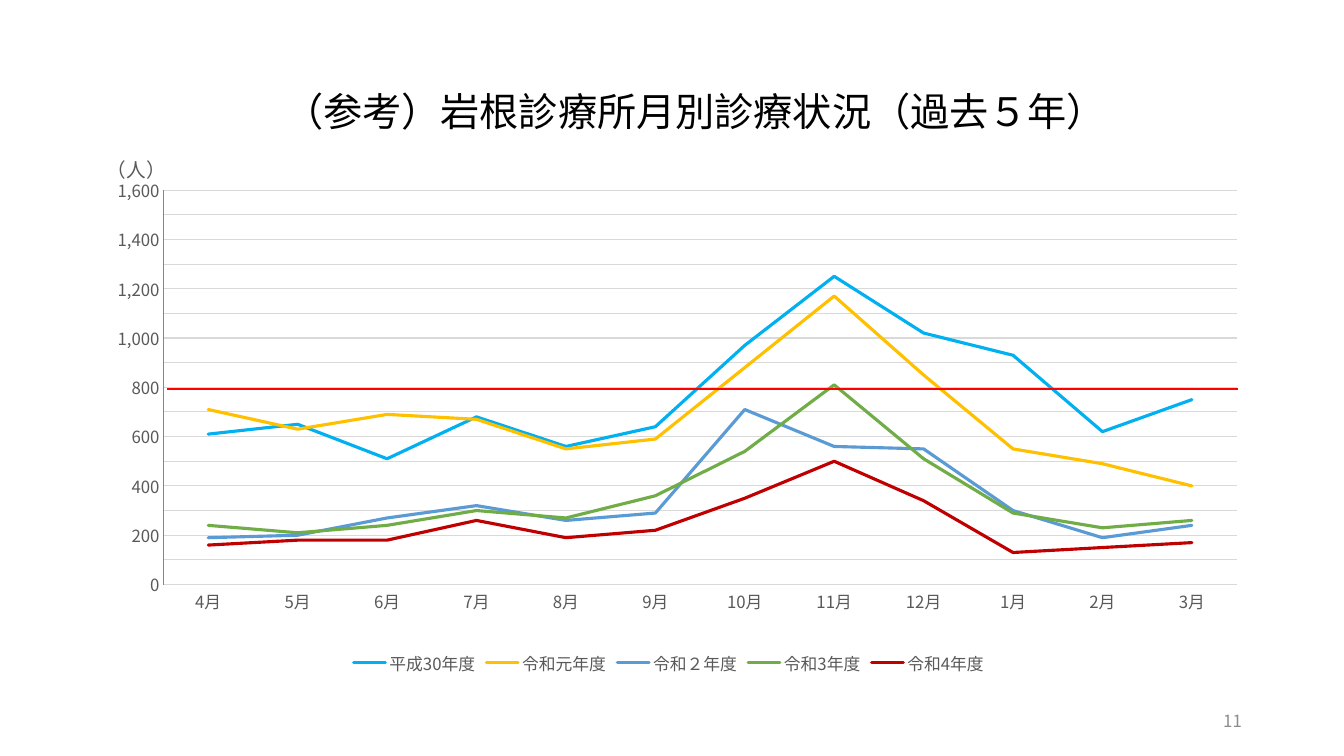
from dataclasses import dataclass

from lxml.etree import SubElement
from pptx import Presentation
from pptx.chart.axis import CategoryAxis, ValueAxis
from pptx.chart.chart import Chart
from pptx.chart.data import CategoryChartData
from pptx.dml.color import RGBColor
from pptx.enum.chart import XL_CHART_TYPE, XL_LEGEND_POSITION, XL_TICK_MARK
from pptx.enum.shapes import MSO_CONNECTOR
from pptx.enum.text import MSO_ANCHOR, MSO_AUTO_SIZE, PP_ALIGN
from pptx.oxml import parse_xml
from pptx.oxml.ns import nsdecls, qn
from pptx.oxml.xmlchemy import BaseOxmlElement
from pptx.shapes.base import BaseShape
from pptx.slide import Slide
from pptx.text.text import Font
from pptx.util import Pt

FACE = "Noto Sans CJK JP"
BLACK = RGBColor(0x00, 0x00, 0x00)
TEXT = RGBColor(0x59, 0x59, 0x59)
PALE = RGBColor(0x8C, 0x8C, 0x8C)
AXIS = RGBColor(0x86, 0x86, 0x86)
GRID = RGBColor(0xD9, 0xD9, 0xD9)
RED = RGBColor(0xFF, 0x00, 0x00)
SKY = RGBColor(0x00, 0xB0, 0xF0)
GOLD = RGBColor(0xFF, 0xC0, 0x00)
BLUE = RGBColor(0x5B, 0x9B, 0xD5)
GREEN = RGBColor(0x70, 0xAD, 0x47)
WINE = RGBColor(0xC0, 0x00, 0x00)


@dataclass(frozen=True)
class Box:
    left: float
    top: float
    width: float
    height: float


@dataclass(frozen=True)
class Label:
    text: str
    box: Box
    size: float
    color: RGBColor
    align: PP_ALIGN
    space: float


@dataclass(frozen=True)
class Year:
    name: str
    color: RGBColor
    counts: tuple[int, ...]


MONTHS = [f"{(n + 3) % 12 + 1}月" for n in range(12)]
YEARS = (
    Year("平成30年度", SKY, (610, 650, 510, 680, 560, 640, 970, 1250, 1020, 930, 620, 750)),
    Year("令和元年度", GOLD, (710, 630, 690, 670, 550, 590, 880, 1170, 850, 550, 490, 400)),
    Year("令和２年度", BLUE, (190, 200, 270, 320, 260, 290, 710, 560, 550, 300, 190, 240)),
    Year("令和3年度", GREEN, (240, 210, 240, 300, 270, 360, 540, 810, 510, 290, 230, 260)),
    Year("令和4年度", WINE, (160, 180, 180, 260, 190, 220, 350, 500, 340, 130, 150, 170)),
)
TITLE = Label("（参考）岩根診療所月別診療状況（過去５年）",
              Box(164.2, 61.2, 664.6, 40.3), 28, BLACK, PP_ALIGN.CENTER, 0.9)
PAGE = Label("11", Box(678.2, 500.4, 216, 28.8), 12, PALE, PP_ALIGN.RIGHT, 1.0)
PLOT = Box(71.3, 100.8, 812.9, 384.5)


def style(font: Font, size: float, color: RGBColor) -> None:
    font.name = FACE
    font.size = Pt(size)
    font.bold = False
    font.color.rgb = color


def add_east(root: BaseOxmlElement) -> None:
    for latin in list(root.iter(qn("a:latin"))):
        latin.addnext(parse_xml(f'<a:ea {nsdecls("a")} typeface="{FACE}"/>'))


def fill_text(shape: BaseShape, label: Label) -> None:
    box = label.box
    shape.left, shape.top = Pt(box.left), Pt(box.top)
    shape.width, shape.height = Pt(box.width), Pt(box.height)
    frame = shape.text_frame
    frame.word_wrap = True
    frame.auto_size = MSO_AUTO_SIZE.NONE
    frame.vertical_anchor = MSO_ANCHOR.MIDDLE
    para = frame.paragraphs[0]
    para.alignment = label.align
    para.line_spacing = label.space
    run = para.add_run()
    run.text = label.text
    style(run.font, label.size, label.color)


def make_layout(places: dict[str, str | float]) -> BaseOxmlElement:
    items = "".join(f'<c:{key} val="{val}"/>' for key, val in places.items())
    return parse_xml(f'<c:layout {nsdecls("c")}><c:manualLayout>{items}'
                     '</c:manualLayout></c:layout>')


def style_axis(axis: CategoryAxis | ValueAxis, color: RGBColor) -> None:
    axis.major_tick_mark = axis.minor_tick_mark = XL_TICK_MARK.NONE
    style(axis.tick_labels.font, 12, TEXT)
    axis.format.line.color.rgb = color
    axis.format.line.width = Pt(0.75)


def add_unit(axis: CategoryAxis) -> None:
    title = axis.axis_title
    run = title.text_frame.paragraphs[0].add_run()
    run.text = "（人）"
    style(run.font, 14, TEXT)
    root = title.format.line and axis.axis_title._element
    for old in root.findall(qn("c:layout")):
        root.remove(old)
    root.find(qn("c:tx")).addnext(make_layout(
        {"xMode": "edge", "yMode": "edge", "x": 0.003, "y": 0.013}))


def add_graph(slide: Slide) -> Chart:
    data = CategoryChartData()
    data.categories = MONTHS
    for year in YEARS:
        data.add_series(year.name, year.counts)
    chart = slide.shapes.add_chart(
        XL_CHART_TYPE.LINE, Pt(PLOT.left), Pt(PLOT.top),
        Pt(PLOT.width), Pt(PLOT.height), data).chart
    style(chart.font, 10, BLACK)
    chart.has_title = False
    chart.has_legend = True
    chart.legend.position = XL_LEGEND_POSITION.BOTTOM
    chart.legend.include_in_layout = False
    style(chart.legend.font, 12, TEXT)

    plot = chart.plots[0]
    plot.vary_by_categories = False
    for line, year in zip(plot.series, YEARS):
        line.smooth = False
        line.format.line.color.rgb = year.color
        line.format.line.width = Pt(2.25)
        line.format.line._ln.set("cap", "rnd")

    style_axis(chart.category_axis, GRID)
    add_unit(chart.category_axis)
    scale = chart.value_axis
    style_axis(scale, AXIS)
    scale.minimum_scale, scale.maximum_scale = 0, 1600
    scale.major_unit = 100
    scale.tick_labels.number_format = '#,##0;[Red]\\-#,##0"人"'
    scale.tick_labels.number_format_is_linked = False
    scale.has_major_gridlines = True
    scale.major_gridlines.format.line.color.rgb = GRID
    scale.major_gridlines.format.line.width = Pt(0.75)

    area = chart.element.find(".//" + qn("c:plotArea"))
    for old in area.findall(qn("c:layout")):
        area.remove(old)
    area.insert(0, make_layout(
        {"layoutTarget": "inner", "xMode": "edge", "yMode": "edge",
         "x": 0.056, "y": 0.091, "w": 0.943, "h": 0.733}))
    return chart


def add_mark(slide: Slide) -> None:
    line = slide.shapes.add_connector(
        MSO_CONNECTOR.STRAIGHT, Pt(119.5), Pt(277.9), Pt(884.2), Pt(277.9))
    line.line.color.rgb = RED
    line.line.width = Pt(1)
    SubElement(line.element.spPr, qn("a:effectLst"))


def main() -> None:
    deck = Presentation()
    deck.slide_width, deck.slide_height = Pt(960), Pt(540)
    slide = deck.slides.add_slide(deck.slide_layouts[5])
    fill_text(slide.shapes.title, TITLE)
    chart = add_graph(slide)
    fill_text(slide.shapes.add_textbox(0, 0, 0, 0), PAGE)
    add_mark(slide)
    add_east(slide.element)
    add_east(chart.element)
    deck.save("out.pptx")


if __name__ == "__main__":
    main()
